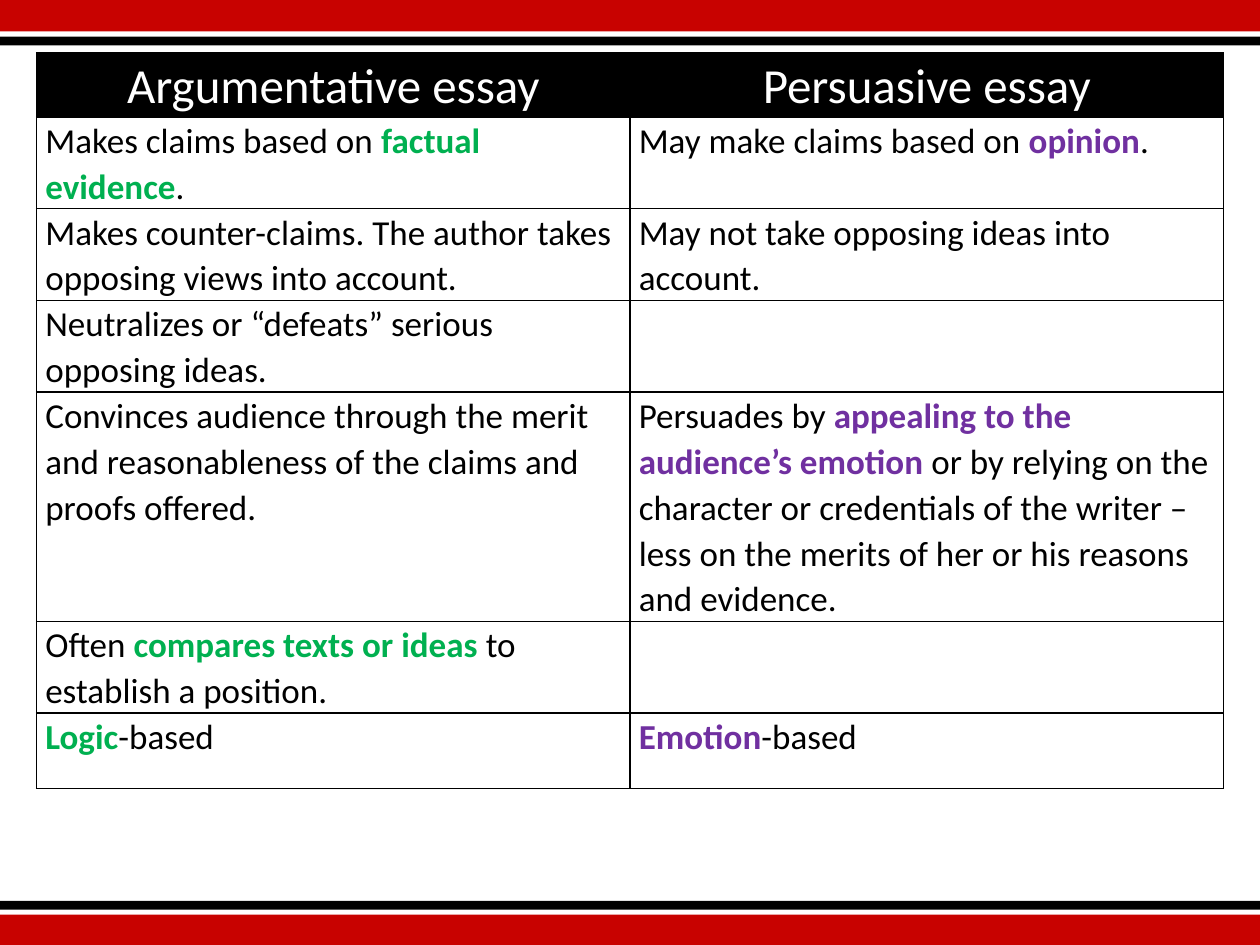
from lxml.etree import SubElement
from pptx import Presentation
from pptx.dml.color import RGBColor
from pptx.enum.shapes import MSO_SHAPE
from pptx.enum.text import PP_ALIGN
from pptx.oxml.ns import qn
from pptx.util import Inches, Pt

RED = RGBColor(0xC8, 0x02, 0x00)
BLACK = RGBColor(0x00, 0x00, 0x00)
WHITE = RGBColor(0xFF, 0xFF, 0xFF)
GREEN = RGBColor(0x00, 0xB0, 0x50)
PURPLE = RGBColor(0x70, 0x30, 0xA0)

HEADINGS = ("Argumentative essay", "Persuasive essay")
HEADING_HEIGHT = 0.45
COLUMN_ACCENTS = (GREEN, PURPLE)
# Asterisks enclose the emphasised words.
COMPARISONS = [
    (0.67, "Makes claims based on *factual evidence*.",
     "May make claims based on *opinion*."),
    (0.67, "Makes counter-claims. The author takes opposing views into account.",
     "May not take opposing ideas into account."),
    (0.67, "Neutralizes or “defeats” serious opposing ideas.", ""),
    (1.68, "Convinces audience through the merit and reasonableness "
     "of the claims and proofs offered.",
     "Persuades by *appealing to the audience’s emotion *or by relying on the "
     "character or credentials of the writer – less on the merits of her or "
     "his reasons and evidence."),
    (0.67, "Often *compares texts or ideas *to establish a position.", ""),
    (0.6, "*Logic*-based", "*Emotion*-based"),
]


class SlideBuilder:
    font_name = "Calibri"
    heading_size = Pt(28)
    body_size = Pt(20)
    line_spacing = 1.07
    side_margin = Inches(0.07)
    border_width = Pt(1)

    def __init__(self, presentation):
        self.width = presentation.slide_width
        self.height = presentation.slide_height
        self.slide = presentation.slides.add_slide(presentation.slide_layouts[6])

    def band(self, top, height, color):
        shape = self.slide.shapes.add_shape(
            MSO_SHAPE.RECTANGLE, 0, int(top * self.height),
            self.width, int(height * self.height))
        shape.shadow.inherit = False
        shape.fill.solid()
        shape.fill.fore_color.rgb = color
        shape.line.fill.background()

    def borders(self, cell):
        properties = cell._tc.get_or_add_tcPr()
        for side in ("a:lnL", "a:lnR", "a:lnT", "a:lnB"):
            line = SubElement(properties, qn(side), w=str(self.border_width))
            fill = SubElement(line, qn("a:solidFill"))
            SubElement(fill, qn("a:srgbClr"), val=str(BLACK))

    def cell(self, cell, text, size, color, accent):
        self.borders(cell)
        cell.margin_left = cell.margin_right = self.side_margin
        cell.margin_top = cell.margin_bottom = 0
        paragraph = cell.text_frame.paragraphs[0]
        paragraph.line_spacing = self.line_spacing
        paragraph.font.name = self.font_name
        paragraph.font.size = size
        for position, words in enumerate(text.split("*")):
            if words:
                run = paragraph.add_run()
                run.text = words
                emphasised = position % 2 == 1
                run.font.bold = emphasised
                run.font.color.rgb = accent if emphasised else color

    def table(self, left, top, width, headings, comparisons):
        heights = [HEADING_HEIGHT] + [row[0] for row in comparisons]
        frame = self.slide.shapes.add_table(
            len(heights), len(headings), int(left * self.width),
            int(top * self.height), int(width * self.width), Inches(sum(heights)))
        table = frame.table
        table.first_row = table.horz_banding = False
        for row, height in zip(table.rows, heights):
            row.height = Inches(height)
        for column, heading in enumerate(headings):
            cell = table.cell(0, column)
            self.cell(cell, heading, self.heading_size, WHITE, WHITE)
            cell.text_frame.paragraphs[0].alignment = PP_ALIGN.CENTER
            cell.fill.solid()
            cell.fill.fore_color.rgb = BLACK
        for row, (_, *texts) in enumerate(comparisons, 1):
            for column, (text, accent) in enumerate(zip(texts, COLUMN_ACCENTS)):
                cell = table.cell(row, column)
                self.cell(cell, text, self.body_size, BLACK, accent)
                cell.fill.background()


def main():
    presentation = Presentation()
    presentation.slide_width = Inches(10)
    presentation.slide_height = Inches(7.5)
    builder = SlideBuilder(presentation)
    for top, height, color in (
            (0, 0.25, RED), (7.26, 0.25, RED),
            (0.29, 0.07, BLACK), (7.15, 0.07, BLACK)):
        builder.band(top / 7.5, height / 7.5, color)
    builder.table(0.029, 0.42 / 7.5, 0.942, HEADINGS, COMPARISONS)
    presentation.save("out.pptx")


if __name__ == "__main__":
    main()
